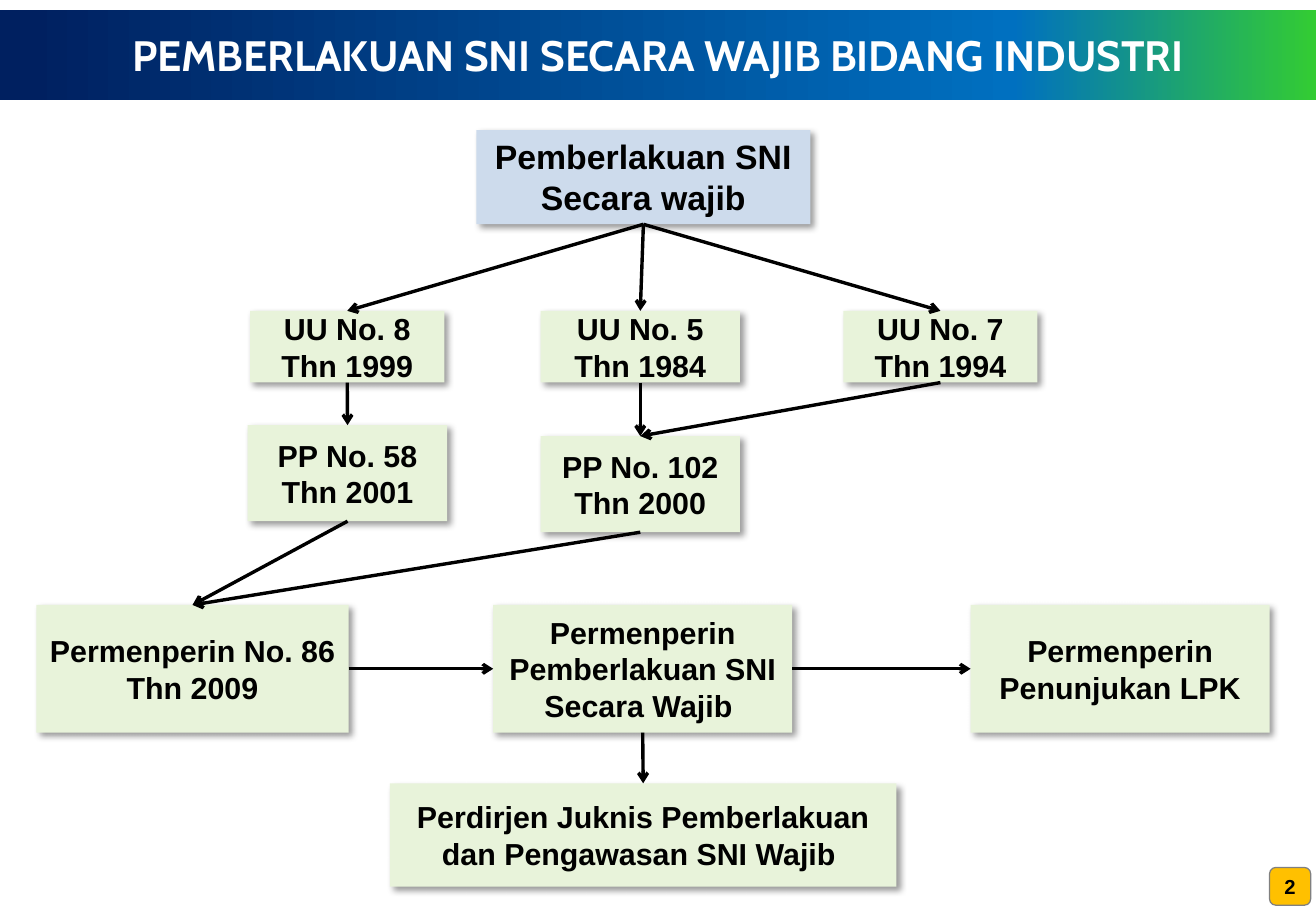
from copy import deepcopy
from dataclasses import dataclass

from lxml import etree
from pptx import Presentation
from pptx import util as u
from pptx.dml.color import RGBColor
from pptx.enum import shapes, text
from pptx.oxml import ns

GREEN, BLUE = "E8F3DA", "CDDBEC"
BANNER_TOP, BANNER_HEIGHT = 0.2, 1.9
LAW_TOP, LAW_HEIGHT = 6.5, 1.5
PP_WIDTH, PP_HEIGHT = 4.17, 2.01
DECREE_TOP, DECREE_HEIGHT = 12.65, 2.67
TOP, LEFT, BOTTOM, RIGHT = range(4)


@dataclass
class Box:
    key: str
    label: str
    x: float
    y: float
    w: float
    h: float
    fill: str = GREEN
    size: float = 18
    anchor: text.MSO_ANCHOR = text.MSO_ANCHOR.MIDDLE


@dataclass
class Arrow:
    start: str
    end: str
    start_side: int = BOTTOM
    end_side: int = TOP


BOXES = [
    Box("sni", "Pemberlakuan SNI Secara wajib", 9.96, 2.72, 6.98, 1.97,
        BLUE, 20, text.MSO_ANCHOR.TOP),
    Box("uu8", "UU No. 8 Thn 1999", 5.23, LAW_TOP, 4.06, LAW_HEIGHT),
    Box("uu5", "UU No. 5 Thn 1984", 11.3, LAW_TOP, PP_WIDTH, LAW_HEIGHT),
    Box("uu7", "UU No. 7 Thn 1994", 17.63, LAW_TOP, 4.06, LAW_HEIGHT),
    Box("pp58", "PP No. 58 Thn 2001", 5.18, 8.89, PP_WIDTH, PP_HEIGHT),
    Box("pp102", "PP No. 102 Thn 2000", 11.3, 9.12, PP_WIDTH, PP_HEIGHT),
    Box("no86", "Permenperin No. 86 Thn 2009", 0.76, DECREE_TOP, 6.53, DECREE_HEIGHT),
    Box("wajib", "Permenperin Pemberlakuan SNI Secara Wajib ",
        10.31, DECREE_TOP, 6.25, DECREE_HEIGHT),
    Box("lpk", "Permenperin Penunjukan LPK", 20.29, DECREE_TOP, 6.25, DECREE_HEIGHT),
    Box("juknis", "Perdirjen Juknis Pemberlakuan dan Pengawasan SNI Wajib ",
        8.15, 16.38, 10.59, 2.16),
]

ARROWS = [
    Arrow("sni", "uu8"), Arrow("sni", "uu5"), Arrow("sni", "uu7"),
    Arrow("uu8", "pp58"), Arrow("uu5", "pp102"), Arrow("uu7", "pp102"),
    Arrow("pp58", "no86"), Arrow("pp102", "no86"),
    Arrow("no86", "wajib", RIGHT, LEFT), Arrow("wajib", "lpk", RIGHT, LEFT),
    Arrow("wajib", "juknis"),
]


def rgb(value: str) -> RGBColor:
    return RGBColor.from_string(value)


def add_xml(parent, tag: str, **attrs):
    return etree.SubElement(parent, ns.qn(tag), attrs)


def apply(target, values: dict) -> None:
    for name, value in values.items():
        setattr(target, name, value)


def write(sp, label: str, size: float, color: str = "000000", font: str = "Arial",
          **frame) -> None:
    tf = sp.text_frame
    apply(tf, {"word_wrap": True, "vertical_anchor": text.MSO_ANCHOR.MIDDLE, **frame})
    p = tf.paragraphs[0]
    p.alignment = text.PP_ALIGN.CENTER
    r = p.add_run()
    r.text = label
    apply(r.font, {"name": font, "size": u.Pt(size), "bold": True})
    r.font.color.rgb = rgb(color)


def add_block(s, kind, x: float, y: float, w: float, h: float, fill: str):
    sp = s.shapes.add_shape(kind, u.Cm(x), u.Cm(y), u.Cm(w), u.Cm(h))
    sp.shadow.inherit = False
    sp.fill.solid()
    sp.fill.fore_color.rgb = rgb(fill)
    sp.line.fill.background()
    return sp


def add_box(s, box: Box):
    sp = add_block(s, shapes.MSO_SHAPE.RECTANGLE, box.x, box.y, box.w, box.h, box.fill)
    effects = sp._element.spPr.find(ns.qn("a:effectLst"))
    shadow = add_xml(effects, "a:outerShdw", blurRad=str(u.Pt(4)), dist=str(u.Pt(3)),
                     dir="2700000", algn="tl", rotWithShape="0")
    add_xml(add_xml(shadow, "a:srgbClr", val="000000"), "a:alpha", val="40000")
    write(sp, box.label, box.size, vertical_anchor=box.anchor)
    return sp


def add_arrow(s, arrow: Arrow, placed: dict) -> None:
    c = s.shapes.add_connector(shapes.MSO_CONNECTOR.STRAIGHT, 0, 0, 0, 0)
    c.begin_connect(placed[arrow.start], arrow.start_side)
    c.end_connect(placed[arrow.end], arrow.end_side)
    c.line.width = u.Pt(2)
    c.line.color.rgb = rgb("000000")
    add_xml(c.line._get_or_add_ln(), "a:tailEnd", type="arrow")
    add_xml(c._element.spPr, "a:effectLst")


def add_banner(s, width: float) -> None:
    sp = add_block(s, shapes.MSO_SHAPE.RECTANGLE, 0, BANNER_TOP, width, BANNER_HEIGHT,
                   "002060")
    sp.fill.gradient()
    sp.fill.gradient_angle = 0
    stops = sp._element.spPr.find(".//" + ns.qn("a:gsLst"))
    stops.append(deepcopy(stops[-1]))
    colors = [(0.02, "002060"), (0.77, "0070C0"), (1, "33CC33")]
    for stop, (position, color) in zip(sp.fill.gradient_stops, colors):
        stop.position = position
        stop.color.rgb = rgb(color)
    s.shapes.title._element.addprevious(sp._element)


def add_page_number(s) -> None:
    sp = add_block(s, shapes.MSO_SHAPE.ROUNDED_RECTANGLE, 26.54, 18.14, 0.86, 0.79, "FFC000")
    sp.line.color.rgb = rgb("808080")
    sp.line.width = u.Pt(0.75)
    write(sp, "2", 12, word_wrap=False)


def main() -> None:
    prs = Presentation()
    width = 27.51
    apply(prs, {"slide_width": u.Cm(width), "slide_height": u.Cm(19.05)})
    s = prs.slides.add_slide(prs.slide_layouts[5])
    title = s.shapes.title
    apply(title, {"left": u.Cm(1.47), "top": u.Cm(BANNER_TOP),
                  "width": u.Cm(24.77), "height": u.Cm(BANNER_HEIGHT)})
    write(title, "PEMBERLAKUAN SNI SECARA WAJIB BIDANG INDUSTRI ", 25.2, "FFFFFF", "Cabin",
          auto_size=text.MSO_AUTO_SIZE.NONE)
    add_banner(s, width)
    add_page_number(s)
    placed = {box.key: add_box(s, box) for box in BOXES}
    for arrow in ARROWS:
        add_arrow(s, arrow, placed)
    prs.save("out.pptx")


if __name__ == "__main__":
    main()
